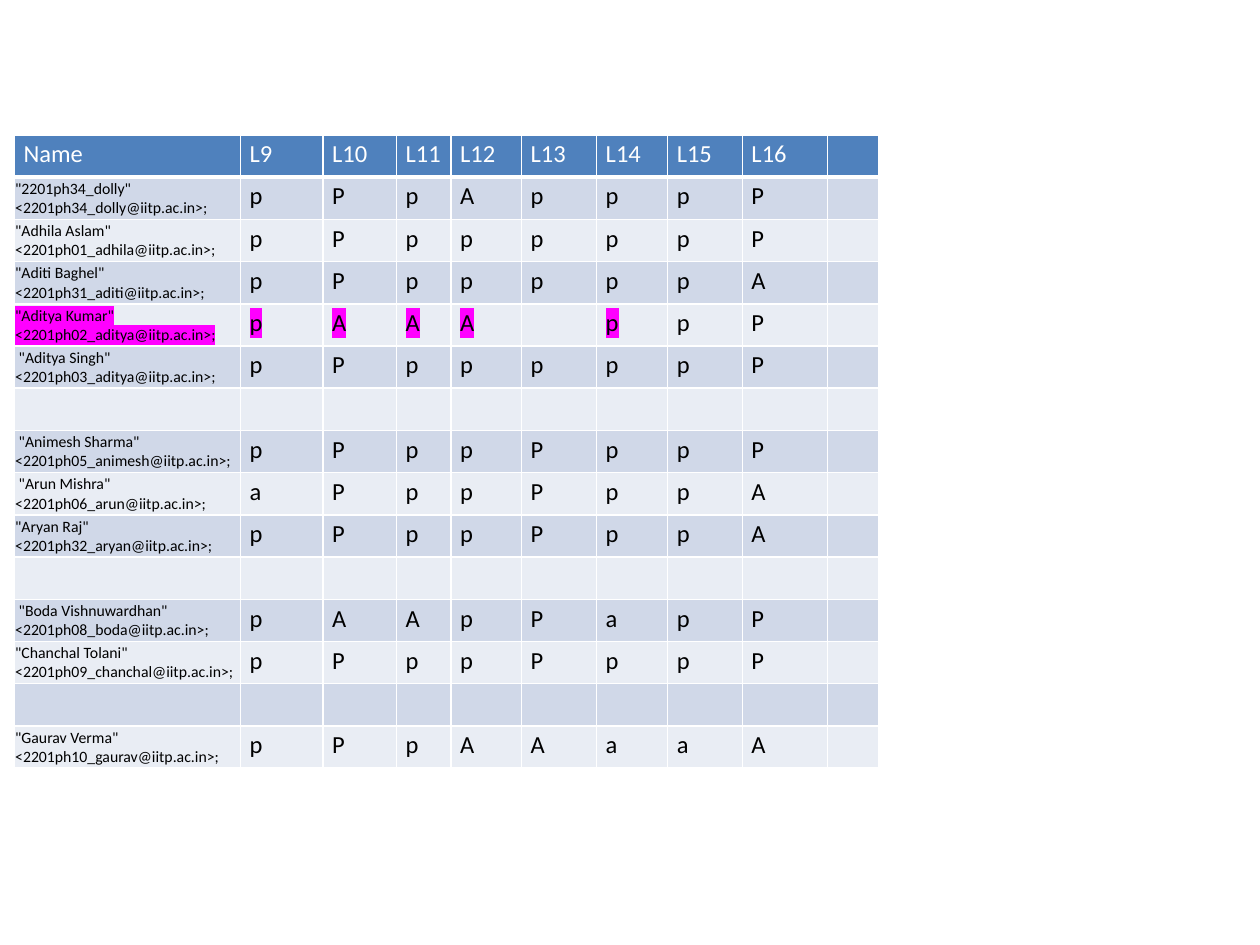
from lxml import etree
from pptx import Presentation
from pptx.dml.color import RGBColor
from pptx.enum import text
from pptx.oxml import ns
from pptx.util import Pt

# Content: quoted name, mailbox, marks for L9 to L16 ("-" is an empty cell)
LECTURES = ["L9", "L10", "L11", "L12", "L13", "L14", "L15", "L16"]
STUDENTS = [
    ('"2201ph34_dolly"', "2201ph34_dolly", "pPpApppP"),
    ('"Adhila Aslam"', "2201ph01_adhila", "pPpppppP"),
    ('"Aditi Baghel"', "2201ph31_aditi", "pPpppppA"),
    ('"Aditya Kumar"', "2201ph02_aditya", "pAAA-ppP"),
    (' "Aditya Singh"', "2201ph03_aditya", "pPpppppP"),
    None,
    (' "Animesh Sharma"', "2201ph05_animesh", "pPppPppP"),
    (' "Arun Mishra"', "2201ph06_arun", "aPppPppA"),
    ('"Aryan Raj"', "2201ph32_aryan", "pPppPppA"),
    None,
    (' "Boda Vishnuwardhan"', "2201ph08_boda", "pAApPapP"),
    ('"Chanchal Tolani"', "2201ph09_chanchal", "pPppPppP"),
    None,
    ('"Gaurav Verma"', "2201ph10_gaurav", "pPpAAaaA"),
]
DOMAIN = "iitp.ac.in"
MARKED_ROW, MARKED_COLUMNS = 4, range(7)

# Format
WHITE = RGBColor(0xFF, 0xFF, 0xFF)
BLACK = RGBColor(0x00, 0x00, 0x00)
BLUE = RGBColor(0x4F, 0x81, 0xBD)
BANDS = [RGBColor(0xE9, 0xED, 0xF4), RGBColor(0xD0, 0xD8, 0xE8)]
MAGENTA = RGBColor(0xFF, 0x00, 0xFF)
LEFT, TOP, ROW_HEIGHT = 8.2, 77.1, 24.14
WIDTHS = [129.2, 47.2, 42, 31.2, 40.3, 42.9, 40.6, 42.7, 48.7, 29]
GRID_FORMAT = {
    "margin_left": Pt(5.25), "margin_right": Pt(5.25),
    "margin_top": Pt(2.6), "margin_bottom": Pt(2.6),
    "vertical_anchor": text.MSO_ANCHOR.TOP,
}
NAME_FORMAT = {
    "margin_left": Pt(0.5), "margin_right": Pt(0.5),
    "margin_top": Pt(0.5), "margin_bottom": Pt(0),
    "vertical_anchor": text.MSO_ANCHOR.MIDDLE,
}


def set_format(target, values):
    for name, value in values.items():
        setattr(target, name, value)


def add_color(parent, tag, color):
    node = etree.SubElement(parent, ns.qn(tag))
    etree.SubElement(node, ns.qn("a:srgbClr"), val=str(color))
    return node


def add_borders(cell, bottom):
    properties = cell._tc.get_or_add_tcPr()
    for side, width in {"L": 1, "R": 1, "T": 1, "B": bottom}.items():
        line = etree.SubElement(properties, ns.qn(f"a:ln{side}"), w=str(Pt(width)))
        add_color(line, "a:solidFill", WHITE)


def write(para, words, size, color, marked):
    if not words:
        # An empty cell needs its size too, or it stretches the row
        etree.SubElement(para._p, ns.qn("a:endParaRPr"), sz=str(size * 100))
        return
    span = para.add_run()
    span.text = words
    set_format(span.font, {"size": Pt(size), "bold": False})
    span.font.color.rgb = color
    if marked:
        add_color(span.font._element, "a:highlight", MAGENTA)
    span.font.name = "Calibri"


def row_words(student):
    if student is None:
        return [""] * len(WIDTHS)
    name, mailbox, marks = student
    return [f"{name} <{mailbox}@{DOMAIN}>;", *marks.replace("-", " "), ""]


deck = Presentation()
set_format(deck, {"slide_width": Pt(720), "slide_height": Pt(540)})
page = deck.slides.add_slide(deck.slide_layouts[6])

# Attendance table
rows = [["Name", *LECTURES, ""]] + [row_words(student) for student in STUDENTS]
table = page.shapes.add_table(
    len(rows), len(WIDTHS), Pt(LEFT), Pt(TOP),
    Pt(sum(WIDTHS)), Pt(ROW_HEIGHT * len(rows))).table
for column, width in zip(table.columns, WIDTHS):
    column.width = Pt(width)

for r, words in enumerate(rows):
    table.rows[r].height = Pt(ROW_HEIGHT)
    header = r == 0
    for c, word in enumerate(words):
        cell = table.cell(r, c)
        is_name = c == 0 and not header and word != ""
        set_format(cell, NAME_FORMAT if is_name else GRID_FORMAT)
        add_borders(cell, 3 if header else 1)
        cell.fill.solid()
        cell.fill.fore_color.rgb = BLUE if header else BANDS[r % 2]
        write(cell.text_frame.paragraphs[0], word if word != " " else "",
              9 if is_name else 14, WHITE if header else BLACK,
              r == MARKED_ROW and c in MARKED_COLUMNS)

deck.save("out.pptx")
